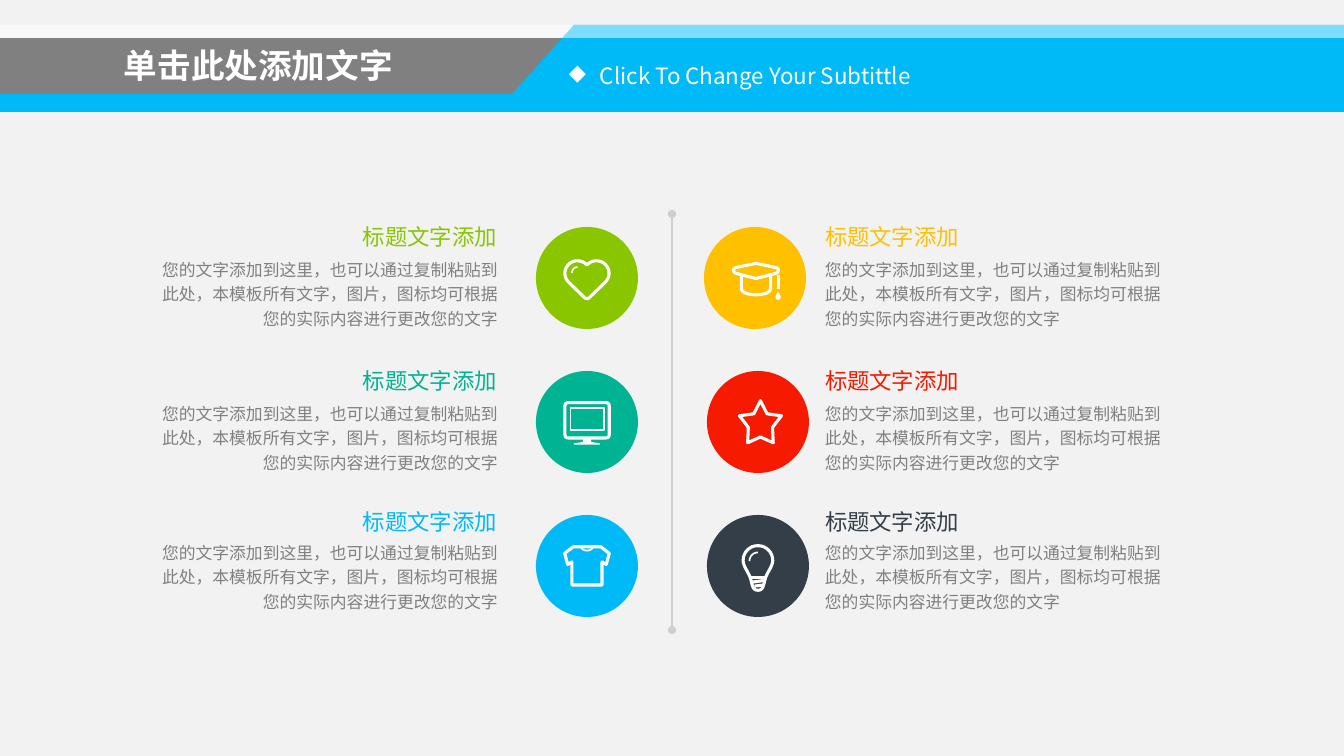
import pptx
import pptx.util
import pptx.dml.color
import pptx.enum.shapes
import pptx.enum.text
import pptx.oxml.ns
from dataclasses import dataclass
from lxml import etree


@dataclass(frozen=True)
class Theme:
    back: str = "F2F2F2"
    white: str = "FFFFFF"
    gray: str = "808080"
    axis: str = "D0CECE"
    blue: str = "00BAF7"
    green: str = "89C600"
    teal: str = "00B393"
    amber: str = "FFC000"
    red: str = "F61A00"
    slate: str = "343E48"
    font: str = "Noto Sans CJK SC"
    title_font: str = "Lato"
    title_size: int = 24
    heading_size: int = 16
    body_size: int = 12
    bold_stroke: float = 2.2
    thin_stroke: float = 1.2


THEME = Theme()
PX = 914400 / 100.8
PAGE_WIDTH, PAGE_HEIGHT = 1344, 756
TITLE = "单击此处添加文字"
SUBTITLE = "Click To Change Your Subtittle"
HEADING = "标题文字添加"
BODY = "您的文字添加到这里，也可以通过复制粘贴到此处，本模板所有文字，图片，图标均可根据您的实际内容进行更改您的文字"

# Outline points are tenths of a px from the disc centre; six numbers make a curve.
BOLD, THIN, SOLID = "bold", "thin", "solid"
HEART = [
    (BOLD, True, [(0, -130), (-50, -185, -130, -185, -180, -140), (-235, -85, -235, -10, -180, 45),
                  (-25, 195), (-10, 210, 10, 210, 25, 195), (180, 45),
                  (235, -10, 235, -85, 180, -140), (130, -185, 50, -185, 0, -130)]),
    (THIN, False, [(-150, -50), (-150, -85, -125, -109, -94, -109)]),
]
MONITOR = [
    (BOLD, True, [(-185, -193), (188, -193), (210, -193, 223, -180, 223, -158), (223, 125),
                  (223, 147, 210, 160, 188, 160), (-185, 160), (-207, 160, -220, 147, -220, 125),
                  (-220, -158), (-220, -180, -207, -193, -185, -193)]),
    (THIN, True, [(-165, -143), (173, -143), (173, 79), (-165, 79)]),
    (SOLID, True, [(-40, 170), (42, 170), (42, 200), (130, 214), (130, 225), (-130, 225),
                   (-130, 214), (-40, 200)]),
]
SHIRT = [
    (BOLD, True, [(-138, -192), (138, -192), (223, -126), (193, -15), (150, -40), (150, 191),
                  (-150, 191), (-150, -40), (-193, -15), (-223, -126)]),
    (THIN, False, [(-60, -190), (-50, -142, 50, -142, 60, -190)]),
]
CAP = [
    (BOLD, True, [(10, -146), (205, -105), (245, -95, 245, -55, 205, -45), (10, 5), (-185, -45),
                  (-225, -55, -225, -95, -185, -105)]),
    (BOLD, False, [(-136, -20), (-136, 103), (-136, 150, -60, 168, 10, 168),
                   (80, 168, 156, 150, 156, 103), (156, -20)]),
    (BOLD, False, [(237, -33), (237, 108)]),
    (SOLID, True, [(232, 140), (215, 150, 207, 180, 207, 195), (207, 225, 257, 225, 257, 195),
                   (257, 180, 249, 150, 232, 140)]),
]
STAR = [
    (BOLD, True, [(25, -213), (91, -82), (235, -62), (146, 54), (153, 208), (25, 150),
                  (-103, 208), (-96, 54), (-185, -62), (-41, -82)]),
]
BULB = [
    (BOLD, True, [(0, -203), (82, -203, 148, -138, 148, -56), (148, 5, 95, 60, 75, 120),
                  (55, 190, 55, 243, 0, 243), (-55, 243, -55, 190, -75, 120),
                  (-95, 60, -148, 5, -148, -56), (-148, -138, -82, -203, 0, -203)]),
    (BOLD, False, [(-75, 111), (75, 111)]),
    (BOLD, False, [(-50, 161), (56, 146)]),
    (BOLD, False, [(-35, 201), (46, 191)]),
    (THIN, False, [(-85, -50), (-85, -97, -47, -136, 0, -136)]),
]

DISC = 102
ROWS = [(227, 218, 251), (371, 362, 395), (515, 503, 534)]
LEFT = {"heading": 351, "body": 137, "width": 371, "align": "RIGHT",
        "items": [(THEME.green, 536, HEART), (THEME.teal, 536, MONITOR), (THEME.blue, 536, SHIRT)]}
RIGHT = {"heading": 815, "body": 815, "width": 367, "align": "LEFT",
         "items": [(THEME.amber, 704, CAP), (THEME.red, 707, STAR), (THEME.slate, 707, BULB)]}


def px(length):
    return round(length * PX)


def rgb(color):
    return pptx.dml.color.RGBColor.from_string(color)


def add_xml(parent, tag, **attributes):
    return etree.SubElement(parent, pptx.oxml.ns.qn(tag), attributes)


def paint(shape, color):
    shape.shadow.inherit = False
    shape.fill.solid()
    shape.fill.fore_color.rgb = rgb(color)
    shape.line.fill.background()
    return shape


def add_preset(page, kind, box, color):
    preset = getattr(pptx.enum.shapes.MSO_SHAPE, kind)
    return paint(page.shapes.add_shape(preset, *map(px, box)), color)


def add_text(page, text, box, size, color, font=THEME.font, bold=False, align="LEFT", wrap=True,
             grow=True, spacing=None, before=0, insets=(10, 5), bullet=None, indent=0):
    shape = page.shapes.add_textbox(*map(px, box))
    frame = shape.text_frame
    frame.word_wrap = wrap
    if grow:
        frame.auto_size = pptx.enum.text.MSO_AUTO_SIZE.SHAPE_TO_FIT_TEXT
    frame.margin_left = frame.margin_right = px(insets[0])
    frame.margin_top = frame.margin_bottom = px(insets[1])
    para = frame.paragraphs[0]
    para.alignment = getattr(pptx.enum.text.PP_ALIGN, align)
    para.line_spacing = spacing
    para.space_before = pptx.util.Pt(before)
    if bullet:
        settings = para._p.get_or_add_pPr()
        settings.set("marL", str(px(indent)))
        settings.set("indent", str(-px(indent)))
        add_xml(settings, "a:buChar", char=bullet)
    span = para.add_run()
    span.text = text
    span.font.size = pptx.util.Pt(size)
    span.font.bold = bold
    span.font.color.rgb = rgb(color)
    span.font.name = font
    add_xml(span._r.get_or_add_rPr(), "a:ea", typeface=font)


def flatten(points, steps=8):
    flat = [points[0]]
    for point in points[1:]:
        if len(point) == 2:
            flat.append(point)
            continue
        ends = [flat[-1], point[:2], point[2:4], point[4:]]
        for step in range(1, steps + 1):
            t = step / steps
            weights = ((1 - t) ** 3, 3 * t * (1 - t) ** 2, 3 * t * t * (1 - t), t ** 3)
            flat.append(tuple(sum(w * end[axis] for w, end in zip(weights, ends)) for axis in (0, 1)))
    return flat


def add_outline(page, points, closed, origin, scale):
    flat = flatten(points)
    builder = page.shapes.build_freeform(*flat[0], scale=scale)
    builder.add_line_segments(flat[1:], close=closed)
    return builder.convert_to_shape(*map(px, origin))


def add_icon(page, outlines, center):
    for style, closed, points in outlines:
        shape = paint(add_outline(page, points, closed, center, PX / 10), THEME.white)
        if style != SOLID:
            shape.fill.background()
            shape.line.color.rgb = rgb(THEME.white)
            shape.line.width = pptx.util.Pt(THEME.bold_stroke if style == BOLD else THEME.thin_stroke)
            add_xml(shape.line._get_or_add_ln(), "a:round")


def add_banner(page):
    add_preset(page, "RECTANGLE", (0, 56, PAGE_WIDTH, 56), THEME.blue)
    add_preset(page, "RECTANGLE", (0, 38, PAGE_WIDTH, 56), THEME.gray)
    slant = [(574, 25), (PAGE_WIDTH, 25), (PAGE_WIDTH, 112), (496, 112)]
    paint(add_outline(page, slant, True, (0, 0), PX), THEME.blue)
    strip = add_preset(page, "RECTANGLE", (0, 25, PAGE_WIDTH, 13), THEME.white)
    tint = strip._element.spPr.find(".//" + pptx.oxml.ns.qn("a:srgbClr"))
    add_xml(tint, "a:alpha", val="50000")
    add_text(page, TITLE, (117, 42, 380, 47), THEME.title_size, THEME.white,
             font=THEME.title_font, bold=True, insets=(7, 3))
    add_text(page, SUBTITLE, (553, 51, 642, 46), THEME.heading_size, THEME.white, grow=False,
             spacing=1.1, before=3.2, insets=(16, 8), bullet="◆", indent=31)


def add_column(page, column):
    for (disc_top, heading_top, body_top), (color, disc_left, icon) in zip(ROWS, column["items"]):
        add_text(page, HEADING, (column["heading"], heading_top, 156, 37), THEME.heading_size, color,
                 align=column["align"], wrap=False)
        add_text(page, BODY, (column["body"], body_top, column["width"], 84), THEME.body_size,
                 THEME.gray, align=column["align"], spacing=1.2)
        add_preset(page, "OVAL", (disc_left, disc_top, DISC, DISC), color)
        add_icon(page, icon, (disc_left + DISC // 2, disc_top + DISC // 2))


def add_axis(page):
    straight = pptx.enum.shapes.MSO_CONNECTOR.STRAIGHT
    axis = page.shapes.add_connector(straight, *map(px, (672, 214, 672, 630)))
    axis.line.color.rgb = rgb(THEME.axis)
    axis.line.width = pptx.util.Pt(1.5)
    for end in ("a:headEnd", "a:tailEnd"):
        add_xml(axis.line._get_or_add_ln(), end, type="oval")
    add_xml(axis._element.spPr, "a:effectLst")


def main():
    deck = pptx.Presentation()
    deck.slide_width, deck.slide_height = px(PAGE_WIDTH), px(PAGE_HEIGHT)
    page = deck.slides.add_slide(deck.slide_layouts[6])
    page.background.fill.solid()
    page.background.fill.fore_color.rgb = rgb(THEME.back)
    add_banner(page)
    for column in (LEFT, RIGHT):
        add_column(page, column)
    add_axis(page)
    deck.save("out.pptx")


if __name__ == "__main__":
    main()
